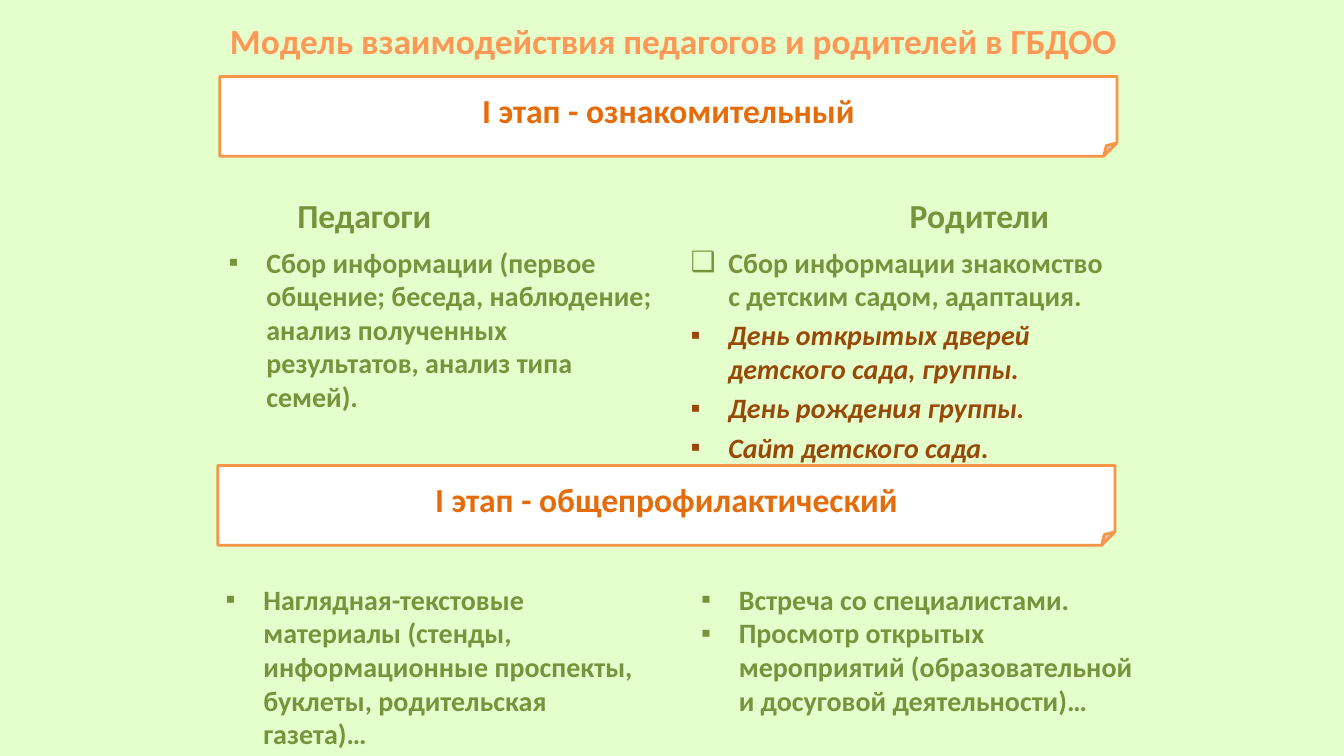
from lxml import etree
from pptx import Presentation, util as u
from pptx.dml.color import RGBColor
from pptx.enum import shapes, text
from pptx.oxml import ns

BACKGROUND = RGBColor(0xE5, 0xFF, 0xCC)
PEACH = RGBColor(0xFF, 0x98, 0x56)
GREEN = RGBColor(0x77, 0x93, 0x3C)
BROWN = RGBColor(0x98, 0x48, 0x07)
ORANGE = RGBColor(0xE4, 0x6C, 0x0A)
BORDER = RGBColor(0xF7, 0x96, 0x46)
WHITE = RGBColor(0xFF, 0xFF, 0xFF)

SQUARE, BOX = "▪", "❑"


class StageSlide:
    """Holds the slide and its text style."""
    font = "Calibri"
    indent = u.Cm(0.95)

    def __init__(self, prs):
        self.slide = prs.slides.add_slide(prs.slide_layouts[4])
        fill = self.slide.background.fill
        fill.solid()
        fill.fore_color.rgb = BACKGROUND

    def style(self, paragraph, size, color, italic=None):
        font = paragraph.font
        font.name, font.size = self.font, u.Pt(size)
        font.bold, font.italic = True, italic
        font.color.rgb = color

    def bullet(self, paragraph, char):
        props = paragraph._p.get_or_add_pPr()
        props.set("marL", str(self.indent))
        props.set("indent", str(-self.indent))
        etree.SubElement(props, ns.qn("a:buFont")).set("typeface", "Arial")
        etree.SubElement(props, ns.qn("a:buChar")).set("char", char)

    def write_centred(self, frame, words, size, color, anchor):
        frame.word_wrap = True
        frame.auto_size = text.MSO_AUTO_SIZE.NONE
        frame.vertical_anchor = anchor
        paragraph = frame.paragraphs[0]
        paragraph.text = words
        paragraph.alignment = text.PP_ALIGN.CENTER
        self.style(paragraph, size, color)

    def write_list(self, frame, items):
        frame.word_wrap = True
        frame.auto_size = text.MSO_AUTO_SIZE.NONE
        for i, (char, words, color, italic) in enumerate(items):
            paragraph = frame.add_paragraph() if i else frame.paragraphs[0]
            paragraph.text = words
            self.bullet(paragraph, char)
            self.style(paragraph, 20, color, italic)

    def placeholder(self, idx, box):
        holder = self.slide.placeholders[idx]
        holder.left, holder.top, holder.width, holder.height = map(u.Cm, box)
        return holder.text_frame

    def heading(self, idx, box, words, size, color, anchor):
        self.write_centred(self.placeholder(idx, box), words, size, color, anchor)

    def body_list(self, idx, box, items):
        self.write_list(self.placeholder(idx, box), items)

    def text_list(self, box, items):
        self.write_list(self.slide.shapes.add_textbox(*map(u.Cm, box)).text_frame, items)

    def banner(self, left, top, words):
        banner = self.slide.shapes.add_shape(
            shapes.MSO_SHAPE.FOLDED_CORNER, u.Cm(left), u.Cm(top), u.Cm(22.61), u.Cm(2.01))
        banner.shadow.inherit = False
        banner.fill.solid()
        banner.fill.fore_color.rgb = WHITE
        banner.line.color.rgb = BORDER
        banner.line.width = u.Pt(2)
        self.write_centred(banner.text_frame, words, 24, ORANGE, text.MSO_ANCHOR.MIDDLE)


def main():
    prs = Presentation()
    prs.slide_width, prs.slide_height = u.Cm(33.87), u.Cm(19.05)
    model = StageSlide(prs)

    # Title
    model.heading(0, (5.54, 0.03, 22.86, 1.98),
                  "Модель взаимодействия педагогов и родителей в ГБДОО",
                  25.2, PEACH, text.MSO_ANCHOR.MIDDLE)

    # First stage: teachers and parents
    for idx, left, group in ((1, 1.7, "Педагоги"), (3, 17.2, "Родители")):
        model.heading(idx, (left, 4.27, 14.96, 1.78), group, 24, GREEN,
                      text.MSO_ANCHOR.BOTTOM)
    model.body_list(2, (5.51, 6.05, 11.23, 4.6), [
        (SQUARE, "Сбор информации (первое общение; беседа, наблюдение; анализ "
                 "полученных результатов, анализ типа семей).", GREEN, None)])
    model.body_list(4, (17.15, 6.05, 11.1, 5.69), [
        (BOX, "Сбор информации знакомство с детским садом, адаптация.", GREEN, None),
        (SQUARE, "День открытых дверей детского сада, группы.", BROWN, True),
        (SQUARE, "День рождения группы.", BROWN, True),
        (SQUARE, "Сайт детского сада.", BROWN, True)])

    # Stage banners
    model.banner(5.54, 1.93, "I этап - ознакомительный")
    model.banner(5.49, 11.73, "I этап - общепрофилактический")

    # Second stage: teachers and parents
    model.text_list((5.44, 14.55, 11.3, 5.31), [
        (SQUARE, "Наглядная-текстовые материалы (стенды, информационные проспекты, "
                 "буклеты, родительская газета)…", GREEN, None)])
    model.text_list((17.42, 14.55, 11.4, 3.68), [
        (SQUARE, "Встреча со специалистами.", GREEN, None),
        (SQUARE, "Просмотр открытых мероприятий (образовательной и досуговой "
                 "деятельности)…", GREEN, None)])

    prs.save("out.pptx")


if __name__ == "__main__":
    main()
